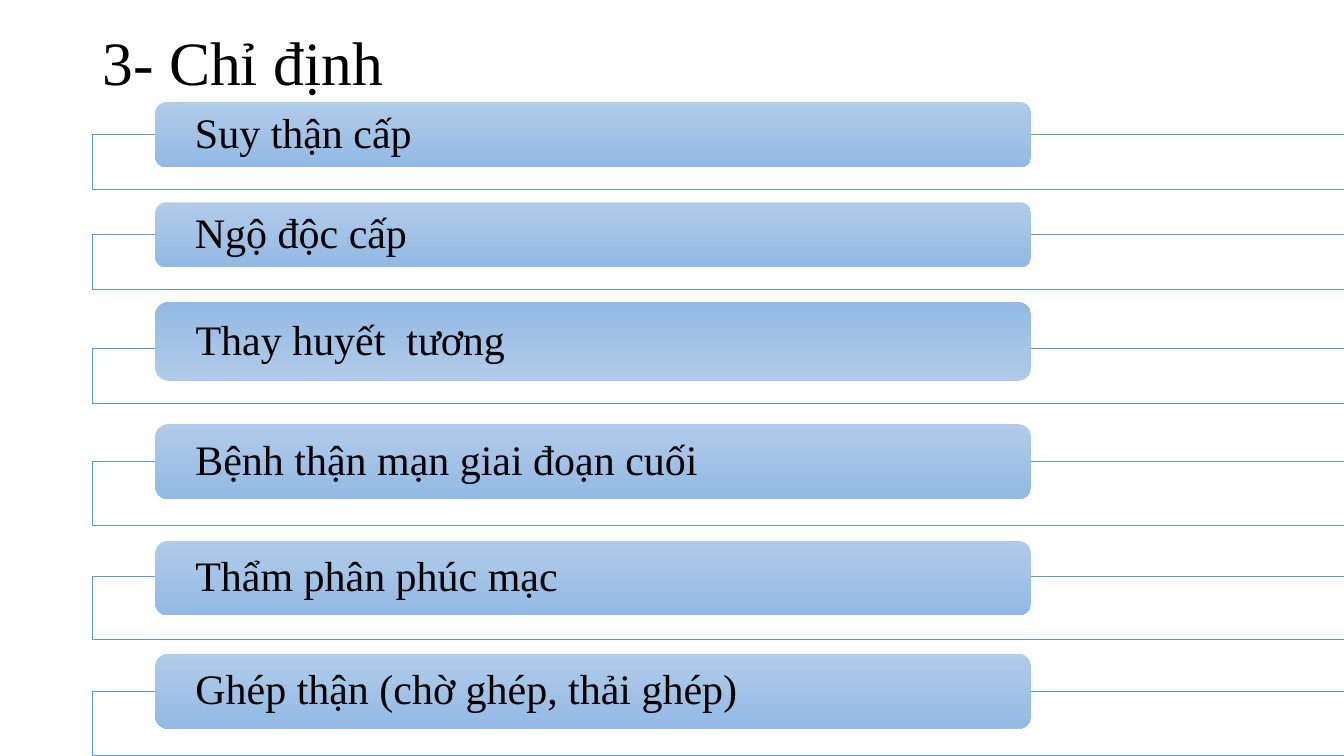
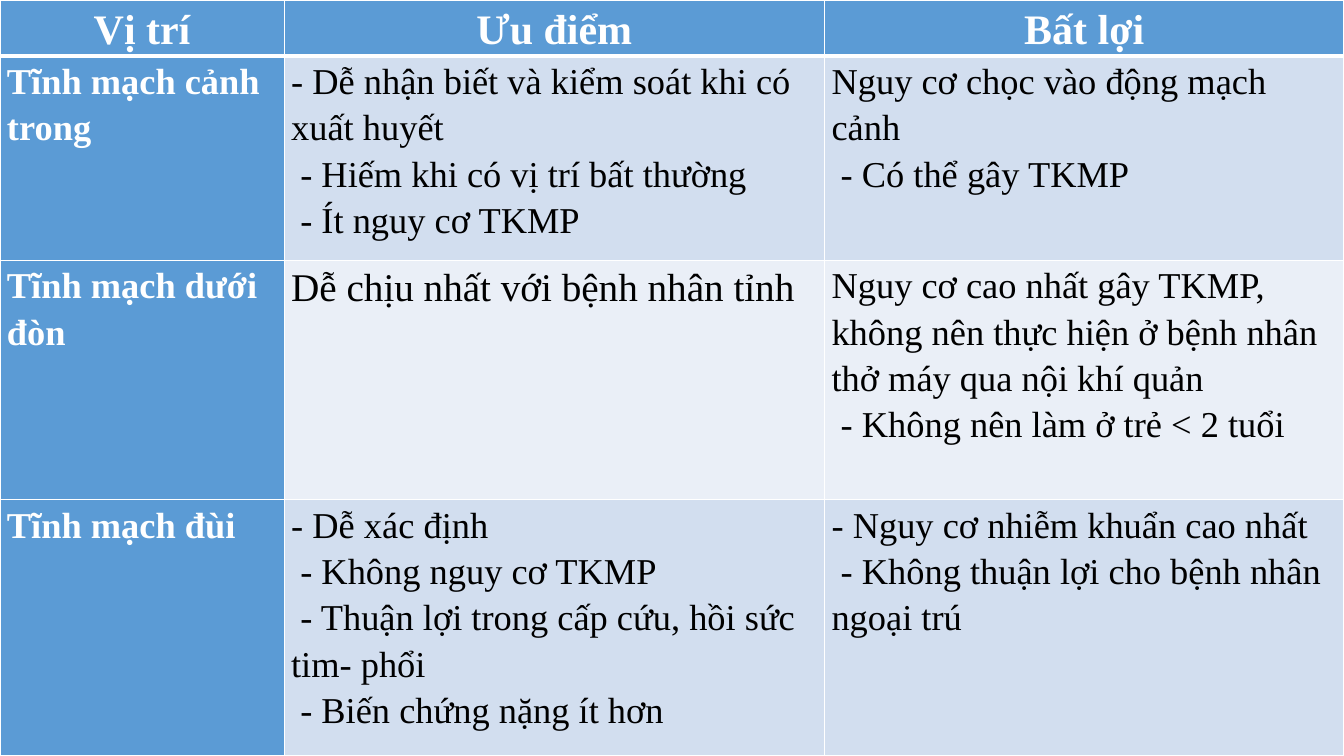
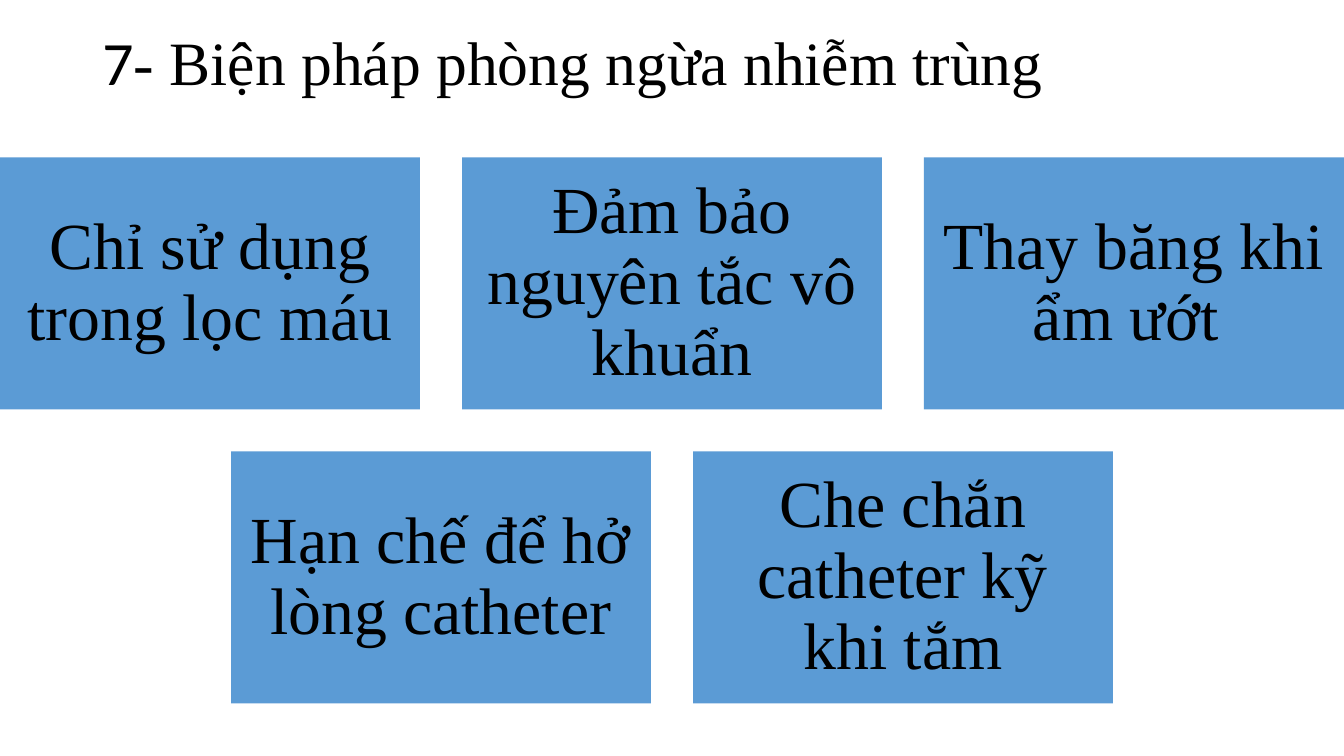
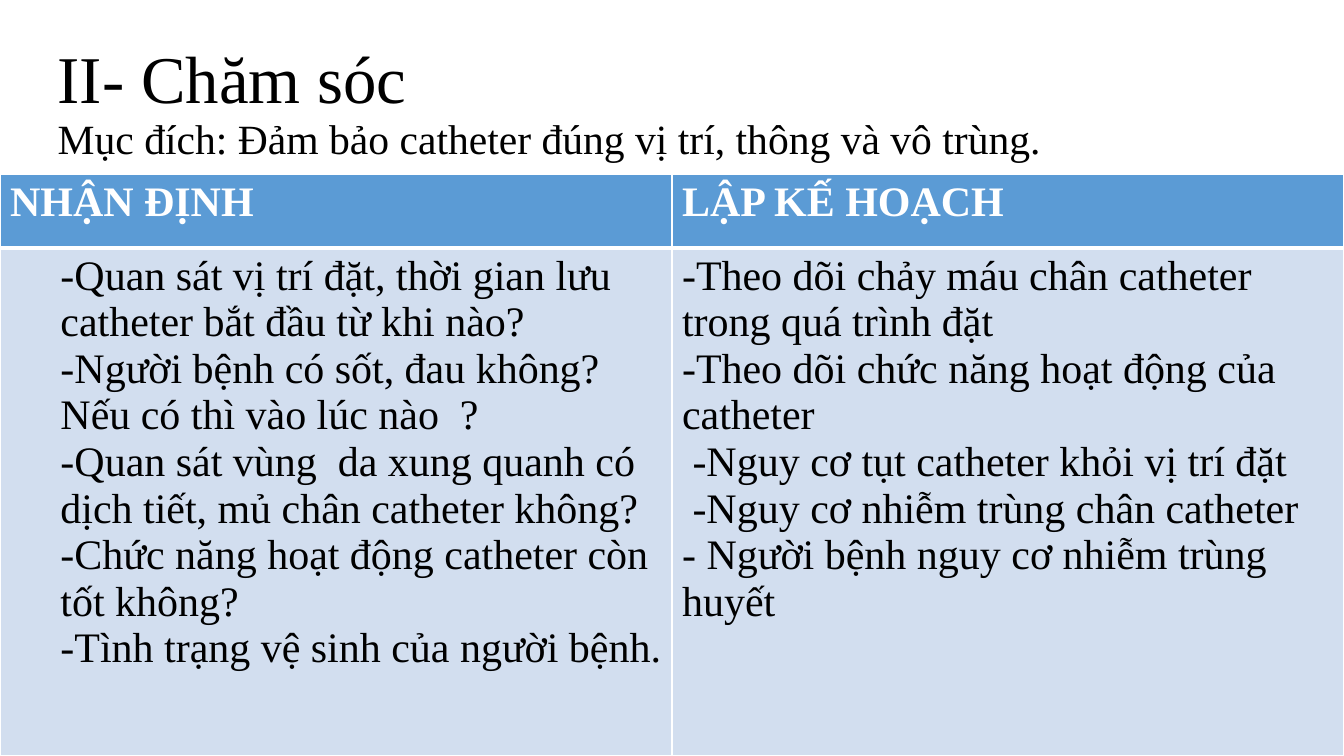
from lxml.etree import SubElement
from pptx import Presentation
from pptx.dml.color import RGBColor
from pptx.enum.shapes import MSO_SHAPE
from pptx.enum.text import MSO_ANCHOR, MSO_AUTO_SIZE, PP_ALIGN
from pptx.oxml.ns import qn
from pptx.util import Pt

SLIDE_WIDTH, SLIDE_HEIGHT = 960, 540
SERIF, SANS = "Times New Roman", "Calibri"
TITLE_BOX = (66, 0, 828, 133)
TITLE_ONLY, BLANK = 5, 6
COLORS = {
    "text": "000000",
    "white": "FFFFFF",
    "accent": "5B9BD5",
    "bar_light": "B1CBE9",
    "bar_dark": "93B9E4",
    "band_dark": "D2DEEF",
    "band_light": "EAEFF7",
}

INDICATIONS = [
    ("Suy thận cấp", 73, 46.5, 96, 39.5),
    ("Ngộ độc cấp", 144.5, 46.5, 167.5, 39.5),
    ("Thay huyết  tương", 216, 56, 248.5, 39.5),
    ("Bệnh thận mạn giai đoạn cuối", 303, 53.5, 329.5, 45.5),
    ("Thẩm phân phúc mạc", 386.5, 53, 411.5, 45.5),
    ("Ghép thận (chờ ghép, thải ghép)", 467, 53.5, 494, 45.5),
]
REVERSED_BAR = 2

SITE_HEADER = ["Vị trí", "Ưu điểm", "Bất lợi"]
SITES = [
    [
        ["Tĩnh mạch cảnh trong"],
        [
            "- Dễ nhận biết và kiểm soát khi có xuất huyết",
            " - Hiếm khi có vị trí bất thường",
            " - Ít nguy cơ TKMP",
        ],
        ["Nguy cơ chọc vào động mạch cảnh", " - Có thể gây TKMP"],
    ],
    [
        ["Tĩnh mạch dưới đòn"],
        ["Dễ chịu nhất với bệnh nhân tỉnh"],
        [
            "Nguy cơ cao nhất gây TKMP, không nên thực hiện ở bệnh nhân thở máy qua nội khí quản",
            " - Không nên làm ở trẻ < 2 tuổi",
        ],
    ],
    [
        ["Tĩnh mạch đùi"],
        [
            "- Dễ xác định",
            " - Không nguy cơ TKMP",
            " - Thuận lợi trong cấp cứu, hồi sức tim- phổi",
            " - Biến chứng nặng ít hơn",
        ],
        ["- Nguy cơ nhiễm khuẩn cao nhất", " - Không thuận lợi cho bệnh nhân ngoại trú"],
    ],
]

PREVENTION_ROWS = [
    ["Chỉ sử dụng trong lọc máu", "Đảm bảo nguyên tắc vô khuẩn", "Thay băng khi ẩm ướt "],
    ["Hạn chế để hở lòng catheter", "Che chắn catheter kỹ khi tắm"],
]

ASSESSMENT = [
    "-Quan sát vị trí đặt, thời gian lưu catheter bắt đầu từ khi nào?",
    "-Người bệnh có sốt, đau không? Nếu có thì vào lúc nào  ?",
    "-Quan sát vùng  da xung quanh có dịch tiết, mủ chân catheter không?",
    "-Chức năng hoạt động catheter còn tốt không?",
    "-Tình trạng vệ sinh của người bệnh.",
]
PLANNING = [
    "-Theo dõi chảy máu chân catheter trong quá trình đặt",
    "-Theo dõi chức năng hoạt động của catheter",
    " -Nguy cơ tụt catheter khỏi vị trí đặt",
    " -Nguy cơ nhiễm trùng chân catheter",
    "- Người bệnh nguy cơ nhiễm trùng huyết",
]


def color(name):
    """Return the named colour."""
    return RGBColor.from_string(COLORS[name])


def add_run(paragraph, text, size, font=SERIF, color_name="text", bold=False):
    """Append one formatted run."""
    run = paragraph.add_run()
    run.text = text
    run.font.name = font
    run.font.size = Pt(size)
    run.font.bold = bold
    run.font.color.rgb = color(color_name)


def set_margins(target, left, top, right, bottom):
    """Set the inner margins of a text frame or a cell."""
    target.margin_left, target.margin_top = Pt(left), Pt(top)
    target.margin_right, target.margin_bottom = Pt(right), Pt(bottom)


def add_title(slide, lines, box=TITLE_BOX, margin_top=23):
    """Fill the title placeholder with lines of (text, size, font) runs."""
    title = slide.shapes.title
    title.left, title.top, title.width, title.height = map(Pt, box)
    frame = title.text_frame
    frame.auto_size = MSO_AUTO_SIZE.NONE
    frame.word_wrap = True
    frame.vertical_anchor = MSO_ANCHOR.TOP
    set_margins(frame, 7.2, margin_top, 7.2, 0)
    paragraph = frame.paragraphs[0]
    paragraph.alignment = PP_ALIGN.LEFT
    paragraph.line_spacing = 0.9
    for index, runs in enumerate(lines):
        if index:
            paragraph.add_line_break()
        for text, size, font in runs:
            add_run(paragraph, text, size, font)


def add_box(slide, kind, left, top, width, height, fill="accent", line=None):
    """Add a flat preset shape."""
    shape = slide.shapes.add_shape(kind, Pt(left), Pt(top), Pt(width), Pt(height))
    shape.shadow.inherit = False
    shape.fill.solid()
    shape.fill.fore_color.rgb = color(fill)
    if line:
        shape.line.color.rgb = color(line)
        shape.line.width = Pt(0.5)
    else:
        shape.line.fill.background()
    return shape


def write_in_box(shape, text, size, alignment, margins):
    """Write one vertically centred paragraph in a shape."""
    frame = shape.text_frame
    frame.word_wrap = True
    frame.vertical_anchor = MSO_ANCHOR.MIDDLE
    set_margins(frame, *margins)
    paragraph = frame.paragraphs[0]
    paragraph.alignment = alignment
    paragraph.line_spacing = 0.9
    add_run(paragraph, text, size)


def set_gradient(shape, angle):
    """Give a bar its light to dark gradient."""
    shape.fill.gradient()
    shape.fill.gradient_angle = angle
    for stop, name in zip(shape.fill.gradient_stops, ("bar_light", "bar_dark")):
        stop.color.rgb = color(name)


def set_borders(cell, row):
    """Draw white cell borders, thicker below the header row."""
    properties = cell._tc.get_or_add_tcPr()
    widths = {"lnL": 1, "lnR": 1, "lnT": 3 if row == 1 else 1, "lnB": 3 if row == 0 else 1}
    for side, width in widths.items():
        line = SubElement(properties, qn(f"a:{side}"), w=str(int(Pt(width))))
        fill = SubElement(line, qn("a:solidFill"))
        SubElement(fill, qn("a:srgbClr"), val=COLORS["white"])


def add_table(slide, top, widths, heights):
    """Add a bordered table starting at the left edge."""
    table = slide.shapes.add_table(
        len(heights), len(widths), Pt(0), Pt(top), Pt(sum(widths)), Pt(sum(heights))
    ).table
    table.horz_banding = False
    for column, width in zip(table.columns, widths):
        column.width = Pt(width)
    for index, height in enumerate(heights):
        table.rows[index].height = Pt(height)
        for cell in table.rows[index].cells:
            set_borders(cell, index)
    return table


def fill_cell(cell, lines, size, fill, spacing=1.0, alignment=PP_ALIGN.LEFT, indent=0):
    """Fill a cell; accent cells carry bold white text."""
    cell.fill.solid()
    cell.fill.fore_color.rgb = color(fill)
    strong = fill == "accent"
    frame = cell.text_frame
    for index, line in enumerate(lines):
        paragraph = frame.add_paragraph() if index else frame.paragraphs[0]
        paragraph.alignment = alignment
        paragraph.line_spacing = spacing
        if indent:
            paragraph._p.get_or_add_pPr().set("marL", str(int(Pt(indent))))
        add_run(paragraph, line, size, color_name="white" if strong else "text", bold=strong)


def add_slide(presentation, layout):
    """Add a slide with the given layout."""
    return presentation.slides.add_slide(presentation.slide_layouts[layout])


def build_indications(presentation):
    """Build the list of indications."""
    slide = add_slide(presentation, TITLE_ONLY)
    add_title(slide, [[("3- Chỉ định", 44, SERIF)]])
    for index, (text, top, height, frame_top, frame_height) in enumerate(INDICATIONS):
        add_box(slide, MSO_SHAPE.RECTANGLE, 66, frame_top, SLIDE_WIDTH - 66, frame_height,
                "white", "accent")
        bar = add_box(slide, MSO_SHAPE.ROUNDED_RECTANGLE, 111, top, 625.5, height)
        set_gradient(bar, 90 if index == REVERSED_BAR else 270)
        write_in_box(bar, text, 30, PP_ALIGN.LEFT, (26, 0, 26, 0))


def build_sites(presentation):
    """Build the comparison of catheter sites."""
    slide = add_slide(presentation, BLANK)
    table = add_table(slide, 0, [203, 386, 371], [40, 146, 171, 183])
    for cell in table.iter_cells():
        set_margins(cell, 5, 0, 5, 0)
    for column, text in enumerate(SITE_HEADER):
        fill_cell(table.cell(0, column), [text], 30, "accent", 1.15, PP_ALIGN.CENTER)
    for row, contents in enumerate(SITES, start=1):
        band = "band_dark" if row % 2 else "band_light"
        for column, lines in enumerate(contents):
            size = 28 if (row, column) == (2, 1) else 26
            fill_cell(table.cell(row, column), lines, size, band if column else "accent", 1.15)


def build_prevention(presentation):
    """Build the centred rows of prevention cards."""
    slide = add_slide(presentation, TITLE_ONLY)
    add_title(slide, [[("7", 44, SANS), ("- Biện pháp phòng ngừa nhiễm trùng", 44, SERIF)]])
    width, height, gap = 300, 180, 30
    for row, texts in enumerate(PREVENTION_ROWS):
        start = (SLIDE_WIDTH - len(texts) * (width + gap) + gap) / 2
        for column, text in enumerate(texts):
            card = add_box(slide, MSO_SHAPE.RECTANGLE, start + column * (width + gap),
                           112.5 + row * (height + gap), width, height)
            write_in_box(card, text, 47, PP_ALIGN.CENTER, (14, 14, 14, 14))


def build_care(presentation):
    """Build the care table under a two-line title."""
    slide = add_slide(presentation, TITLE_ONLY)
    add_title(
        slide,
        [
            [("II- Chăm sóc", 47.7, SERIF)],
            [("Mục đích: Đảm bảo catheter đúng vị trí, thông và vô trùng.", 29.7, SERIF)],
        ],
        (34, 33, 828, 78),
        0,
    )
    top, header_height = 124.5, 52.5
    table = add_table(slide, top, [SLIDE_WIDTH / 2] * 2,
                      [header_height, SLIDE_HEIGHT - top - header_height])
    columns = [("NHẬN ĐỊNH", ASSESSMENT, 36), ("LẬP KẾ HOẠCH", PLANNING, 0)]
    for column, (heading, lines, indent) in enumerate(columns):
        fill_cell(table.cell(0, column), [heading], 30, "accent")
        fill_cell(table.cell(1, column), lines, 30, "band_dark", indent=indent)


def main():
    """Build and save the presentation."""
    presentation = Presentation()
    presentation.slide_width = Pt(SLIDE_WIDTH)
    presentation.slide_height = Pt(SLIDE_HEIGHT)
    build_indications(presentation)
    build_sites(presentation)
    build_prevention(presentation)
    build_care(presentation)
    presentation.save("out.pptx")


if __name__ == "__main__":
    main()
